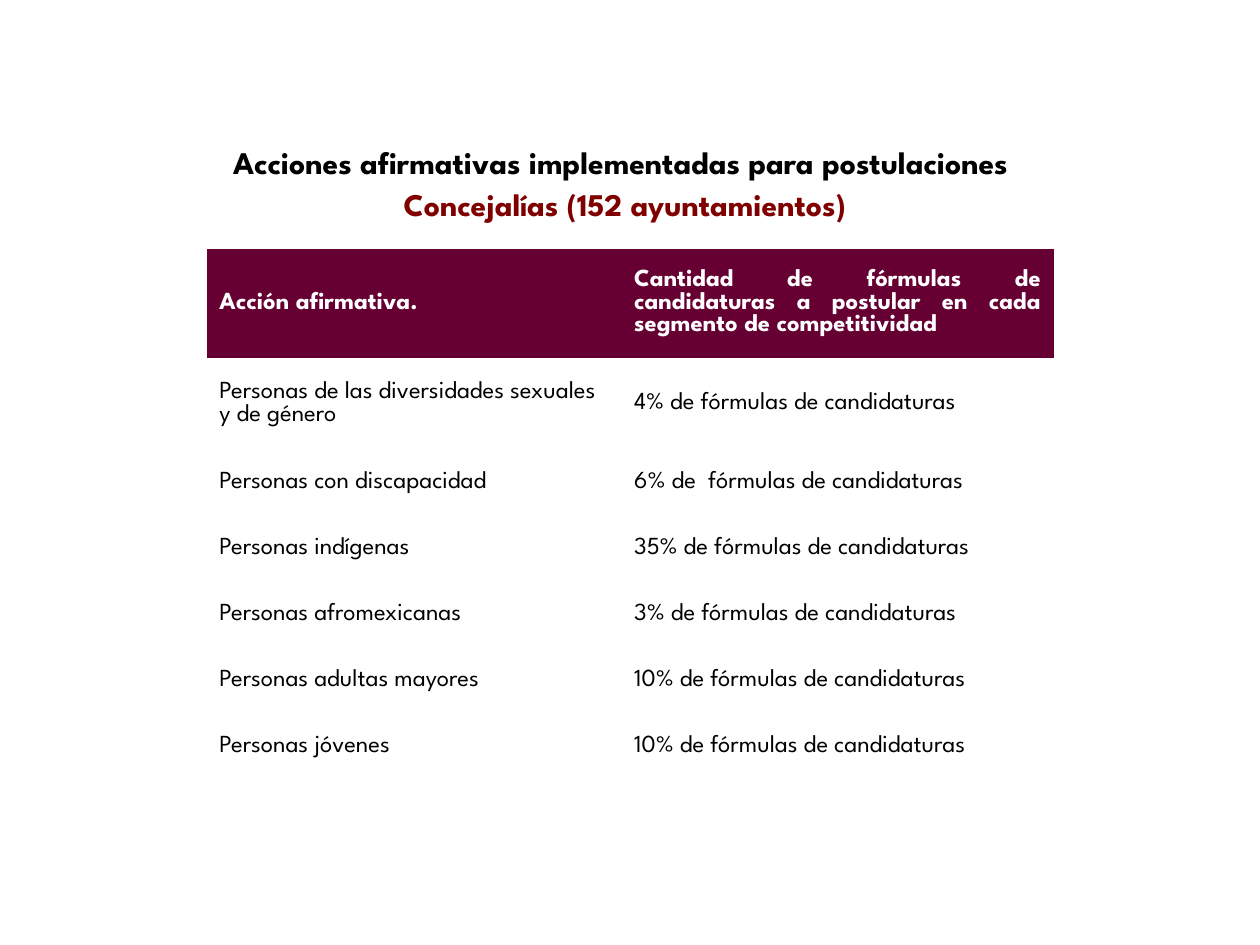
import pptx
import pptx.dml.color
import pptx.enum.text
import pptx.util

Cm = pptx.util.Cm
Pt = pptx.util.Pt
ALIGN = pptx.enum.text.PP_ALIGN
MIDDLE = pptx.enum.text.MSO_ANCHOR.MIDDLE
FONT = "League Spartan"
COLORS = {"wine": "660033", "red": "800000", "black": "000000", "white": "FFFFFF"}
NO_GRID_STYLE = "{2D5ABB26-0587-4C30-8999-92F81FD0307C}"


def color(name):
    return pptx.dml.color.RGBColor.from_string(COLORS[name])


def add_run(paragraph, text, size, color_name, bold):
    run = paragraph.add_run()
    run.text = text
    run.font.name = FONT
    run.font.size = Pt(size)
    run.font.bold = bold
    run.font.color.rgb = color(color_name)


presentation = pptx.Presentation()
presentation.slide_width = Cm(25.4)
presentation.slide_height = Cm(19.05)
slide = presentation.slides.add_slide(presentation.slide_layouts[5])

title = slide.shapes.title
title.left, title.top, title.width, title.height = Cm(0.69), Cm(3.07), Cm(23.65), Cm(1.93)
title_frame = title.text_frame
title_frame.word_wrap = True
title_frame.auto_size = pptx.enum.text.MSO_AUTO_SIZE.NONE
title_frame.vertical_anchor = MIDDLE
title_frame.margin_top = Cm(0)
title_frame.margin_bottom = Cm(0.6)

title_lines = [
    ("Acciones afirmativas implementadas para postulaciones", "black", 0),
    (" Concejalías (152 ayuntamientos)", "red", 5),
]
for index, (text, color_name, space_before) in enumerate(title_lines):
    paragraph = title_frame.add_paragraph() if index else title_frame.paragraphs[0]
    paragraph.alignment = ALIGN.CENTER
    paragraph.line_spacing = 0.9
    paragraph.space_before = Pt(space_before)
    add_run(paragraph, text, 18, color_name, True)

rows = [
    ("Acción afirmativa.",
     "Cantidad de fórmulas de candidaturas a postular en cada segmento de competitividad"),
    ("Personas de las diversidades sexuales y de género", "4% de fórmulas de candidaturas"),
    ("Personas con discapacidad", "6% de  fórmulas de candidaturas"),
    ("Personas indígenas", "35% de fórmulas de candidaturas"),
    ("Personas afromexicanas", "3% de fórmulas de candidaturas"),
    ("Personas adultas mayores", "10% de fórmulas de candidaturas"),
    ("Personas jóvenes", "10% de fórmulas de candidaturas"),
]
column_widths = [8.36, 8.71]
row_heights = [2.21, 1.85] + [1.33] * 5

table = slide.shapes.add_table(
    len(rows), len(column_widths), Cm(4.17), Cm(5.01),
    Cm(sum(column_widths)), Cm(sum(row_heights)),
).table
table.horz_banding = False
table._tbl.tblPr.find(pptx.oxml.ns.qn("a:tableStyleId")).text = NO_GRID_STYLE
for column, width in zip(table.columns, column_widths):
    column.width = Cm(width)

for row_index, (texts, height) in enumerate(zip(rows, row_heights)):
    table.rows[row_index].height = Cm(height)
    header = row_index == 0
    for column_index, text in enumerate(texts):
        cell = table.cell(row_index, column_index)
        cell.vertical_anchor = MIDDLE
        if header:
            cell.fill.solid()
            cell.fill.fore_color.rgb = color("wine")
        else:
            cell.fill.background()
        paragraph = cell.text_frame.paragraphs[0]
        paragraph.alignment = ALIGN.JUSTIFY if header else ALIGN.LEFT
        add_run(paragraph, text, 14, "white" if header else "black", header)

presentation.save("out.pptx")
